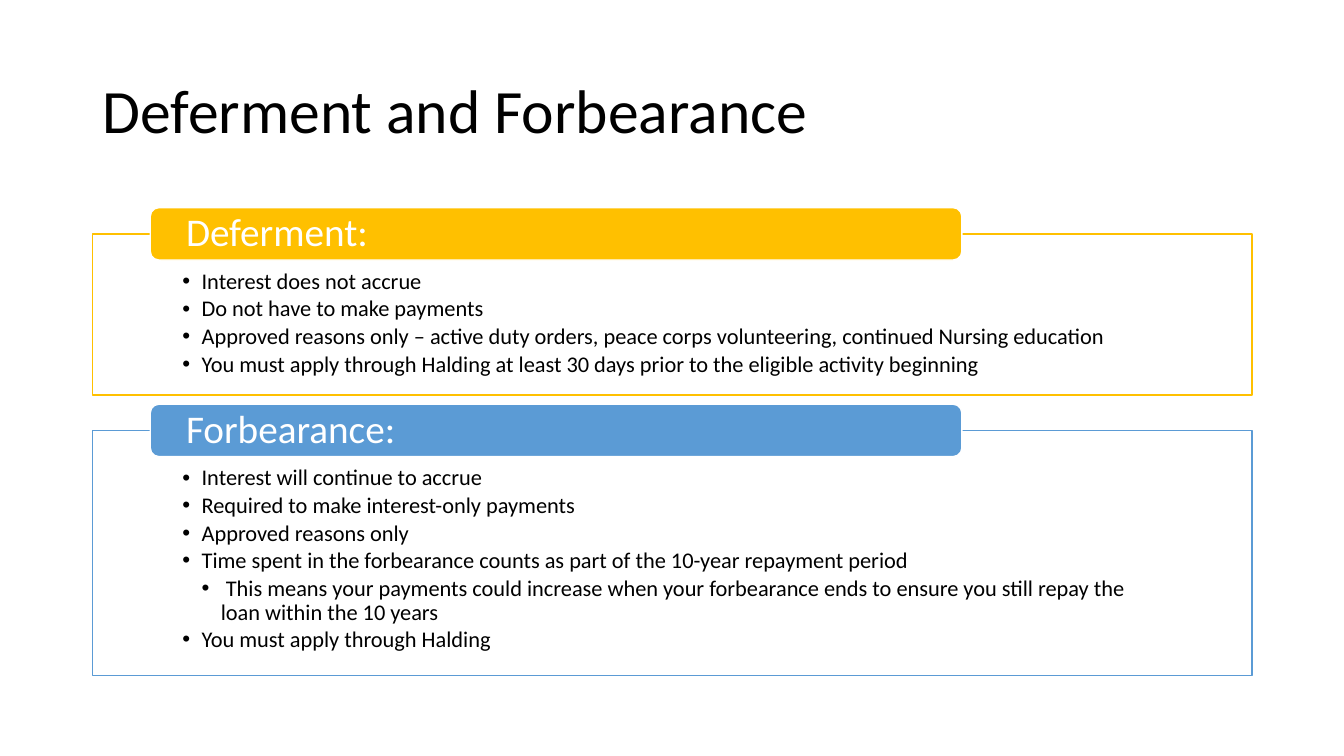
from dataclasses import dataclass

from lxml.etree import SubElement
from pptx import Presentation
from pptx.dml.color import RGBColor
from pptx.enum.shapes import MSO_SHAPE
from pptx.enum.text import MSO_ANCHOR, PP_ALIGN
from pptx.oxml.ns import qn
from pptx.util import Inches, Pt


@dataclass(frozen=True)
class Theme:
    font: str = "Calibri"
    black: RGBColor = RGBColor(0x00, 0x00, 0x00)
    white: RGBColor = RGBColor(0xFF, 0xFF, 0xFF)
    gold: RGBColor = RGBColor(0xFF, 0xC0, 0x00)
    blue: RGBColor = RGBColor(0x5B, 0x9B, 0xD5)
    title_size: Pt = Pt(44)
    heading_size: Pt = Pt(28)
    body_size: Pt = Pt(16)


theme = Theme()


def format_paragraph(paragraph, size, color):
    paragraph.alignment = PP_ALIGN.LEFT
    paragraph.line_spacing = 0.9
    for run in paragraph.runs:
        run.font.name = theme.font
        run.font.size = size
        run.font.color.rgb = color


def add_box(kind, left, top, width, height, fill, line, insets):
    box = slide.shapes.add_shape(
        kind, Inches(left), Inches(top), Inches(width), Inches(height))
    box.shadow.inherit = False
    box.fill.solid()
    box.fill.fore_color.rgb = fill
    box.line.color.rgb = line
    box.line.width = Pt(1)
    frame = box.text_frame
    frame.word_wrap = True
    (frame.margin_left, frame.margin_top,
     frame.margin_right, frame.margin_bottom) = map(Inches, insets)
    return box


# Slide and title
prs = Presentation()
prs.slide_width, prs.slide_height = Inches(13.33), Inches(7.5)
slide = prs.slides.add_slide(prs.slide_layouts[5])
title = slide.shapes.title
title.left, title.top = Inches(0.92), Inches(0.4)
title.width, title.height = Inches(11.5), Inches(1.45)
title.text_frame.text = "Deferment and Forbearance"
title.text_frame.vertical_anchor = MSO_ANCHOR.MIDDLE
format_paragraph(title.text_frame.paragraphs[0], theme.title_size, theme.black)

# Content: heading, colour, panel top, panel height, (level, point) pairs
sections = [
    ("Deferment:", theme.gold, 2.32, 1.6, [
        (1, "Interest\u00a0does not accrue"),
        (1, "Do\u00a0not have to make payments"),
        (1, "Approved reasons only – active duty orders, peace corps "
            "volunteering, continued Nursing education"),
        (1, "You must apply through Halding at least 30 days prior to the "
            "eligible activity beginning"),
    ]),
    ("Forbearance:", theme.blue, 4.27, 2.43, [
        (1, "Interest will continue to accrue"),
        (1, "Required to make interest-only payments"),
        (1, "Approved reasons only"),
        (1, "Time spent in the forbearance counts as part of the 10-year "
            "repayment period"),
        (2, " This means your payments could increase when your forbearance "
            "ends to ensure you still repay the loan within the 10 years"),
        (1, "You must apply through Halding"),
    ]),
]
indent = 0.19
heading_height = 0.52

for heading, color, top, height, points in sections:
    # Outlined panel with bulleted points
    panel = add_box(MSO_SHAPE.RECTANGLE, 0.92, top, 11.5, height,
                    theme.white, color, (0.89, 0.36, 0.89, 0.12))
    panel_color = panel.fill._xPr.find(qn("a:solidFill"))[0]
    SubElement(panel_color, qn("a:alpha"), val="90000")
    panel.text_frame.vertical_anchor = MSO_ANCHOR.TOP
    panel.text_frame.text = "\n".join(point for _, point in points)
    for paragraph, (level, _) in zip(panel.text_frame.paragraphs, points):
        format_paragraph(paragraph, theme.body_size, theme.black)
        paragraph.level = level
        paragraph.space_after = Pt(2.4)
        properties = paragraph._p.get_or_add_pPr()
        properties.set("marL", str(Inches(indent * level)))
        properties.set("indent", str(Inches(-indent)))
        SubElement(properties, qn("a:buFont"), typeface="Arial")
        SubElement(properties, qn("a:buChar"), char="•")

    # Heading tab centred on the panel's top edge
    tab = add_box(MSO_SHAPE.ROUNDED_RECTANGLE, 1.49, top - heading_height / 2,
                  8.05, heading_height, color, theme.white, (0.33, 0, 0.33, 0))
    tab.text_frame.vertical_anchor = MSO_ANCHOR.MIDDLE
    tab.text_frame.text = heading
    format_paragraph(tab.text_frame.paragraphs[0], theme.heading_size, theme.white)

prs.save("out.pptx")
